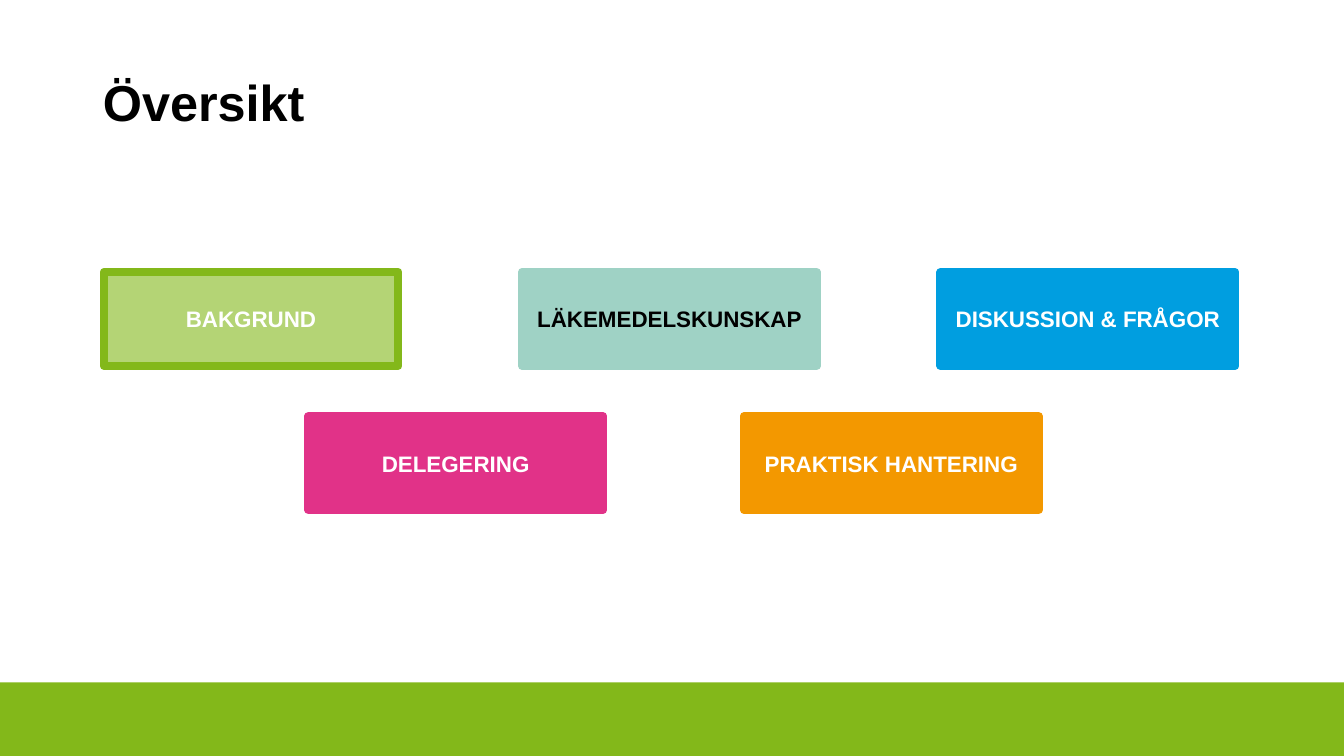
"""Build the overview slide with five course topics in two staggered rows."""
import lxml.etree
import pptx
import pptx.dml.color
import pptx.enum.shapes
import pptx.enum.text
import pptx.oxml.ns
import pptx.util

TITLE = "Översikt"
WIDTH, HEIGHT = 13.33, 7.5
FOOTER_TOP = 6.77
FOOTER_COLOUR = "83B81A"
BOX_WIDTH, BOX_HEIGHT = 2.92, 0.93
LINE_WIDTH = 6

ROWS = [
    {"left": 1.03, "top": 2.7, "step": 4.15, "topics": [
        ("BAKGRUND", "83B81A", "FFFFFF", 60),
        ("LÄKEMEDELSKUNSKAP", "9FD2C5", "000000", 100),
        ("DISKUSSION & FRÅGOR", "009EE0", "FFFFFF", 100),
    ]},
    {"left": 3.06, "top": 4.13, "step": 4.32, "topics": [
        ("DELEGERING", "E13288", "FFFFFF", 100),
        ("PRAKTISK HANTERING", "F39800", "FFFFFF", 100),
    ]},
]


def colour(value):
    """Turn a hex string into a colour."""
    return pptx.dml.color.RGBColor.from_string(value)


def place(shape, left, top, width, height):
    """Set position and size in inches."""
    shape.left, shape.top, shape.width, shape.height = (
        pptx.util.Inches(length) for length in (left, top, width, height))


def style(paragraph, size, text_colour):
    """Set the bold Arial font of a paragraph."""
    font = paragraph.font
    font.name, font.size, font.bold = "Arial", pptx.util.Pt(size), True
    font.color.rgb = colour(text_colour)


def add_block(slide, kind, bounds, fill):
    """Add a filled shape without shadow or outline."""
    shape = slide.shapes.add_shape(kind, 0, 0, 0, 0)
    place(shape, *bounds)
    shape.shadow.inherit = False
    shape.fill.solid()
    shape.fill.fore_color.rgb = colour(fill)
    shape.line.fill.background()
    return shape


def add_topic(slide, left, top, text, fill, text_colour, opacity):
    """Add one topic box with a thick outline in its own colour."""
    kind = pptx.enum.shapes.MSO_SHAPE.ROUND_2_DIAG_RECTANGLE
    box = add_block(slide, kind, (left, top, BOX_WIDTH, BOX_HEIGHT), fill)
    box.adjustments[0] = box.adjustments[1] = 0
    if opacity < 100:
        hue = box.element.spPr.find(".//" + pptx.oxml.ns.qn("a:srgbClr"))
        alpha = lxml.etree.SubElement(hue, pptx.oxml.ns.qn("a:alpha"))
        alpha.set("val", str(opacity * 1000))
    box.line.color.rgb = colour(fill)
    box.line.width = pptx.util.Pt(LINE_WIDTH)
    frame = box.text_frame
    frame.word_wrap = True
    frame.vertical_anchor = pptx.enum.text.MSO_ANCHOR.MIDDLE
    paragraph = frame.paragraphs[0]
    paragraph.text = text
    paragraph.alignment = pptx.enum.text.PP_ALIGN.CENTER
    style(paragraph, 16, text_colour)


def add_title(slide):
    """Move and format the title placeholder."""
    title = slide.shapes.title
    place(title, 0.92, 0.72, 11.5, 1.19)
    frame = title.text_frame
    frame.text = TITLE
    frame.vertical_anchor = pptx.enum.text.MSO_ANCHOR.TOP
    paragraph = frame.paragraphs[0]
    paragraph.alignment = pptx.enum.text.PP_ALIGN.LEFT
    paragraph.line_spacing = 0.9
    style(paragraph, 36, "000000")


def main():
    """Build and save the presentation."""
    presentation = pptx.Presentation()
    presentation.slide_width = pptx.util.Inches(WIDTH)
    presentation.slide_height = pptx.util.Inches(HEIGHT)
    slide = presentation.slides.add_slide(presentation.slide_layouts[5])
    add_block(slide, pptx.enum.shapes.MSO_SHAPE.RECTANGLE,
              (0, FOOTER_TOP, WIDTH, HEIGHT - FOOTER_TOP), FOOTER_COLOUR)
    add_title(slide)
    for row in ROWS:
        for column, topic in enumerate(row["topics"]):
            add_topic(slide, row["left"] + column * row["step"], row["top"], *topic)
    presentation.save("out.pptx")


if __name__ == "__main__":
    main()
